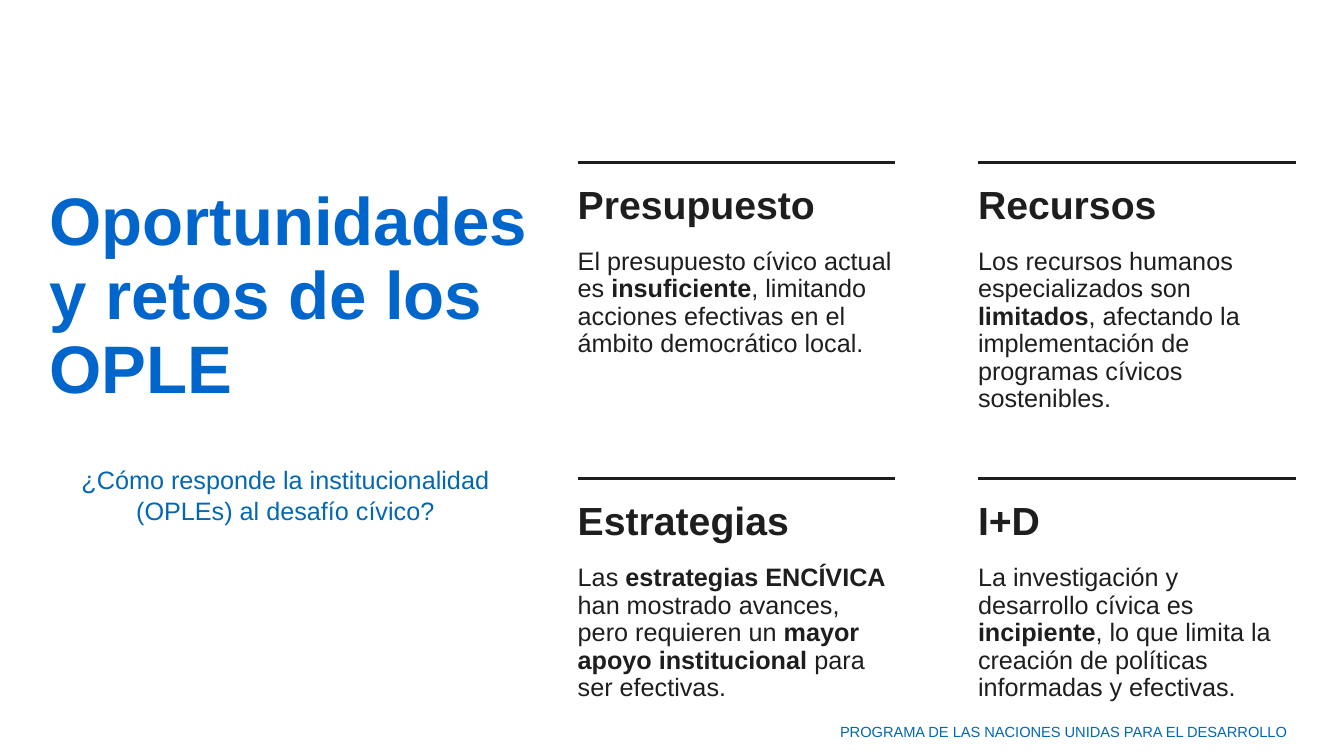
from lxml.etree import SubElement
from pptx import Presentation
from pptx.dml.color import RGBColor
from pptx.enum.shapes import MSO_CONNECTOR
from pptx.enum.text import MSO_AUTO_SIZE, PP_ALIGN
from pptx.oxml.ns import qn
from pptx.util import Inches, Pt

INK = RGBColor(0x1E, 0x1E, 0x1E)
TITLE_BLUE = RGBColor(0x00, 0x66, 0xCC)
UN_BLUE = RGBColor(0x04, 0x68, 0xB1)

TITLE_FORMAT = {"size": Pt(48), "bold": True, "color": TITLE_BLUE}
QUESTION_FORMAT = {"size": Pt(18), "color": UN_BLUE}
FOOTER_FORMAT = {"size": Pt(10.5), "color": UN_BLUE}
HEADING_FORMAT = {"size": Pt(28), "bold": True, "color": INK}
BODY_FORMAT = {"size": Pt(18), "color": INK}

# Heading, body line count, body pieces: every second piece is bold
CHALLENGES = [
    ("Presupuesto", 4, [
        "El presupuesto cívico actual es ", "insuficiente",
        ", limitando acciones efectivas en el ámbito democrático local."]),
    ("Recursos", 6, [
        "Los recursos humanos especializados son ", "limitados",
        ", afectando la implementación de programas cívicos sostenibles."]),
    ("Estrategias", 5, [
        "Las ", "estrategias ENCÍVICA",
        " han mostrado avances, pero requieren un ",
        "mayor apoyo institucional", " para ser efectivas."]),
    ("I+D", 5, [
        "La investigación y desarrollo cívica es ", "incipiente",
        ", lo que limita la creación de políticas informadas y efectivas."]),
]


def add_text(shapes, box, pieces, text_format, spacing=None,
             align=PP_ALIGN.LEFT, inset=True):
    frame = shapes.add_textbox(*map(Inches, box)).text_frame
    frame.word_wrap = True
    frame.auto_size = MSO_AUTO_SIZE.SHAPE_TO_FIT_TEXT
    if not inset:
        for side in ("left", "top", "right", "bottom"):
            setattr(frame, f"margin_{side}", 0)
    paragraph = frame.paragraphs[0]
    paragraph.alignment = align
    if spacing:
        paragraph.line_spacing = Pt(spacing)
    for index, piece in enumerate(pieces):
        run = paragraph.add_run()
        run.text = piece
        values = {"name": "Arial", "bold": index % 2 == 1, **text_format}
        run.font.color.rgb = values.pop("color")
        for attribute, value in values.items():
            setattr(run.font, attribute, value)


def add_introduction(slide, left, top):
    add_text(slide.shapes, (left, top, 4.83, 2.23),
             ["Oportunidades y retos de los OPLE"], TITLE_FORMAT,
             spacing=52.8, inset=False)
    add_text(slide.shapes, (left, top + 2.72, 4.68, 0.71),
             ["¿Cómo responde la institucionalidad (OPLEs) al desafío cívico?"],
             QUESTION_FORMAT, align=PP_ALIGN.CENTER)


def add_challenge(slide, left, top, width, heading, line_count, body):
    shapes = slide.shapes.add_group_shape().shapes
    # Rule above the heading
    rule = shapes.add_connector(
        MSO_CONNECTOR.STRAIGHT, Inches(left), Inches(top),
        Inches(left + width), Inches(top))
    rule.line.color.rgb = INK
    rule.line.width = Pt(2)
    SubElement(rule._element.spPr, qn("a:effectLst"))
    # Heading and explanation
    add_text(shapes, (left, top + 0.33, width, 0.32), [heading],
             HEADING_FORMAT, spacing=22.4, inset=False)
    add_text(shapes, (left, top + 0.85, width, 0.28 * line_count), body,
             BODY_FORMAT, spacing=19.6, inset=False)


def add_challenge_grid(slide, left, top, column_step, row_step):
    for index, challenge in enumerate(CHALLENGES):
        row, column = divmod(index, 2)
        add_challenge(slide, left + column * column_step,
                      top + row * row_step, 3.15, *challenge)


def add_footer(slide, box):
    add_text(slide.shapes, box,
             ["PROGRAMA DE LAS NACIONES UNIDAS PARA EL DESARROLLO"],
             FOOTER_FORMAT, align=PP_ALIGN.RIGHT)


def main():
    presentation = Presentation()
    presentation.slide_width = Inches(13.33)
    presentation.slide_height = Inches(7.5)
    slide = presentation.slides.add_slide(presentation.slide_layouts[6])
    add_footer(slide, (6.11, 7.12, 6.76, 0.29))
    add_introduction(slide, 0.49, 1.84)
    add_challenge_grid(slide, 5.73, 1.61, column_step=3.97, row_step=3.14)
    presentation.save("out.pptx")


if __name__ == "__main__":
    main()
